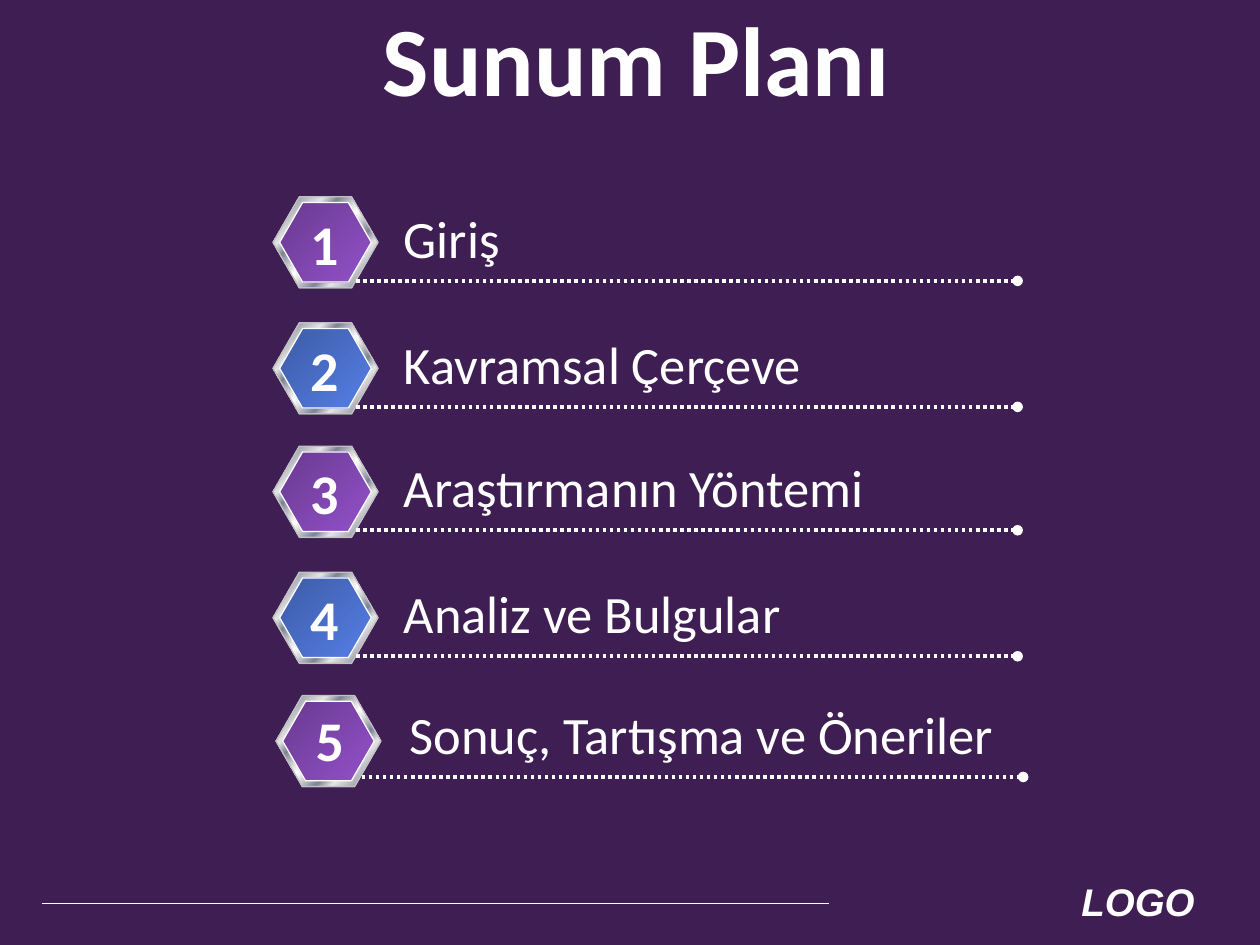
from lxml.etree import SubElement
from pptx import Presentation
from pptx.dml.color import RGBColor
from pptx.enum.dml import MSO_LINE
from pptx.enum.shapes import MSO_CONNECTOR, MSO_SHAPE
from pptx.enum.text import MSO_ANCHOR, MSO_AUTO_SIZE, PP_ALIGN
from pptx.oxml.ns import qn
from pptx.util import Pt

COLORS = {
    "background": "3F1F53", "white": "FFFFFF", "shadow": "808080", "rim": "C0C0C0",
    "silver": "E6E6E6", "steel": "7D8496",
    "purple dark": "693A90", "purple light": "9351C9",
    "blue dark": "3D5BA5", "blue light": "557FE7",
}
TITLE = "Sunum Planı"
LOGO = "LOGO"
AGENDA = [
    {"label": "Giriş", "top": 112.5, "width": 70},
    {"label": "Kavramsal Çerçeve", "top": 184.5, "width": 243.5},
    {"label": "Araştırmanın Yöntemi", "top": 255, "width": 280},
    {"label": "Analiz ve Bulgular", "top": 327, "width": 232},
    {"label": "Sonuç, Tartışma ve Öneriler", "top": 397.5, "width": 351.5,
     "badge_shift": 1.7, "text_shift": (3.2, -1.5)},
]
BADGE_LEFT = 156
CHROME = [(0, "silver"), (7, "steel"), (26, "silver"), (34, "steel"), (46, "silver"),
          (50, "white"), (54, "silver"), (66, "steel"), (74, "silver"), (93, "steel"),
          (100, "silver")]
FACES = [[(0, f"{hue} dark"), (100, f"{hue} light")] for hue in ("purple", "blue")]


def color(name):
    """Return the named colour."""
    return RGBColor.from_string(COLORS[name])


def write(shape, text, size, font, alignment, bold=False, italic=False):
    """Put one formatted run into a shape."""
    paragraph = shape.text_frame.paragraphs[0]
    paragraph.alignment = alignment
    run = paragraph.add_run()
    run.text = text
    run.font.size, run.font.name = Pt(size), font
    run.font.bold, run.font.italic = bold, italic
    run.font.color.rgb = color("white")


def add_text(slide, box, *style, wrap=False, **emphasis):
    """Add a text box that grows with its text."""
    shape = slide.shapes.add_textbox(*map(Pt, box))
    shape.text_frame.word_wrap = wrap
    shape.text_frame.auto_size = MSO_AUTO_SIZE.SHAPE_TO_FIT_TEXT
    write(shape, *style, **emphasis)


def add_line(slide, left, right, top, width):
    """Add a white horizontal line."""
    line = slide.shapes.add_connector(MSO_CONNECTOR.STRAIGHT, Pt(left), Pt(top), Pt(right), Pt(top))
    line.line.color.rgb = color("white")
    line.line.width = Pt(width)
    SubElement(line._element.spPr, qn("a:effectLst"))
    return line


def add_hexagon(group, box):
    """Add a regular hexagon to a badge."""
    shape = group.shapes.add_shape(MSO_SHAPE.HEXAGON, *map(Pt, box))
    shape.adjustments[0], shape.adjustments[1] = 0.289, 1.155
    shape.shadow.inherit = False
    return shape


def fill_gradient(shape, stops, outline):
    """Fill a shape with a diagonal gradient and outline it."""
    shape.fill.gradient()
    shape.fill.gradient_angle = 315
    stop_list = shape._element.spPr.find(qn("a:gradFill")).find(qn("a:gsLst"))
    for stop in list(stop_list):
        stop_list.remove(stop)
    for position, name in stops:
        stop = SubElement(stop_list, qn("a:gs"), pos=str(position * 1000))
        SubElement(stop, qn("a:srgbClr"), val=COLORS[name])
    shape.line.color.rgb = color(outline)
    shape.line.width = Pt(0.75)


def add_badge(slide, left, top, face):
    """Add a chrome-rimmed hexagon badge."""
    group = slide.shapes.add_group_shape()
    shadow = add_hexagon(group, (left, top + 0.5, 60, 52))
    shadow.fill.solid()
    shadow.fill.fore_color.rgb = color("shadow")
    shadow.line.fill.background()
    fill_gradient(add_hexagon(group, (left, top, 60, 52)), CHROME, "rim")
    fill_gradient(add_hexagon(group, (left + 3.8, top + 3.3, 52.4, 45.4)), face, "white")


def add_agenda_row(slide, index, item):
    """Add one numbered agenda row with its dotted rule."""
    shift, drop = item.get("text_shift", (0, 0))
    left, top = BADGE_LEFT + shift, item["top"] + drop
    add_badge(slide, BADGE_LEFT + item.get("badge_shift", 0), item["top"],
              FACES[index % len(FACES)])
    rule = add_line(slide, left + 47.5, left + 425.5, top + 48, 2)
    rule.line.dash_style = MSO_LINE.ROUND_DOT
    SubElement(rule.line._get_or_add_ln(), qn("a:tailEnd"), type="oval")
    add_text(slide, (left + 67.7, top + 1.7, item["width"], 44), item["label"], 30,
             "Calibri", PP_ALIGN.LEFT)
    add_text(slide, (left + 13.8, top + 3.5, 31, 46), str(index + 1), 32,
             "Calibri", PP_ALIGN.CENTER, bold=True)


def main():
    """Build and save the agenda slide."""
    presentation = Presentation()
    presentation.slide_width, presentation.slide_height = Pt(720), Pt(540)
    slide = presentation.slides.add_slide(presentation.slide_layouts[5])
    slide.background.fill.solid()
    slide.background.fill.fore_color.rgb = color("background")

    add_text(slide, (581, 498.2, 108.7, 34), LOGO, 22, "Arial", PP_ALIGN.RIGHT,
             wrap=True, bold=True, italic=True)
    add_line(slide, 24, 474, 516, 0.5)

    title = slide.shapes.title
    title.left, title.top, title.width, title.height = map(Pt, (124, 15, 479.5, 36))
    title.text_frame.vertical_anchor = MSO_ANCHOR.MIDDLE
    title.text_frame.auto_size = MSO_AUTO_SIZE.NONE
    write(title, TITLE, 56, "Calibri", PP_ALIGN.CENTER, bold=True)

    for index, item in enumerate(AGENDA):
        add_agenda_row(slide, index, item)
    presentation.save("out.pptx")


if __name__ == "__main__":
    main()
